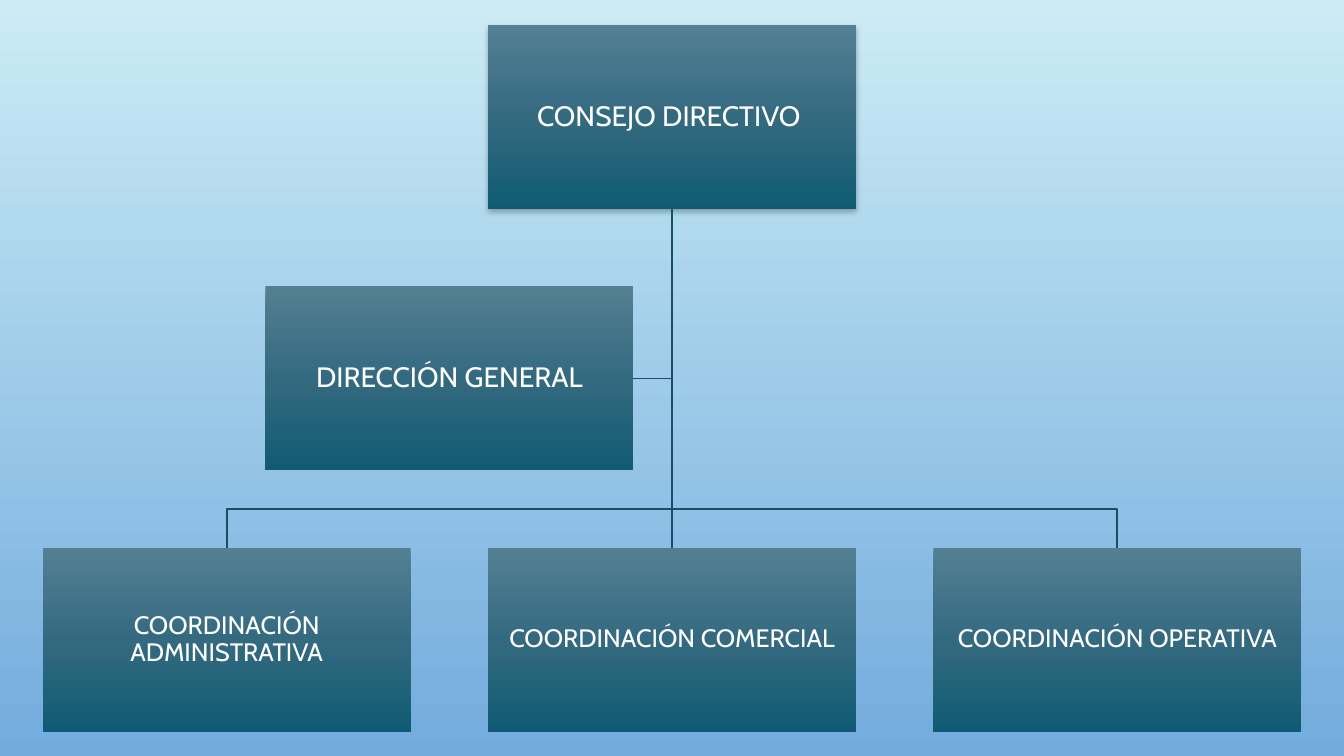
import copy

import pptx
import pptx.dml.color
import pptx.enum.shapes
import pptx.enum.text
import pptx.oxml
import pptx.oxml.ns
import pptx.util
from pptx.dml.color import RGBColor
from pptx.util import Inches

SKY = [RGBColor(0xCB, 0xEC, 0xF5), RGBColor(0x73, 0xAB, 0xDD)]
TEAL = [RGBColor(0x54, 0x7F, 0x93), RGBColor(0x34, 0x6A, 0x80), RGBColor(0x10, 0x5B, 0x73)]
LINE = RGBColor(0x16, 0x50, 0x63)
WHITE = RGBColor(0xFF, 0xFF, 0xFF)
FONT = "Cabin"
SLIDE_W, SLIDE_H = 13.33, 7.5
BOX_W = 3.65
BOX_H = BOX_W / 2
GAP = 0.21 * BOX_W
PITCH = BOX_W + GAP
CENTER = SLIDE_W / 2
TOP_Y = 0.25
STAFF_Y = TOP_Y + BOX_H + GAP
UNIT_Y = STAFF_Y + BOX_H + GAP
BUS_Y = UNIT_Y - GAP / 2
SHADOW = (
    '<a:effectLst %s><a:outerShdw blurRad="50800" dist="25400" dir="5400000" rotWithShape="0">'
    '<a:srgbClr val="000000"><a:alpha val="28000"/></a:srgbClr></a:outerShdw></a:effectLst>'
) % pptx.oxml.ns.nsdecls("a")


def set_gradient(fill, element, colors):
    """Fill from top to bottom with evenly spaced colour stops."""
    fill.gradient()
    fill.gradient_angle = 270
    stops = element.find(".//" + pptx.oxml.ns.qn("a:gsLst"))
    for extra in stops[1:]:
        stops.remove(extra)
    for _ in colors[1:]:
        stops.append(copy.deepcopy(stops[0]))
    for i, (stop, color) in enumerate(zip(fill.gradient_stops, colors)):
        stop.color.rgb = color
        stop.position = i / (len(colors) - 1)


def add_text(s, text, size=18, color=WHITE, font=FONT):
    """Write centred text inside a shape."""
    tf = s.text_frame
    tf.word_wrap = True
    tf.vertical_anchor = pptx.enum.text.MSO_ANCHOR.MIDDLE
    tf.margin_left = tf.margin_right = tf.margin_top = tf.margin_bottom = Inches(0.01)
    p = tf.paragraphs[0]
    p.alignment = pptx.enum.text.PP_ALIGN.CENTER
    p.line_spacing = 0.9
    r = p.add_run()
    r.text = text
    r.font.name = font
    r.font.size = pptx.util.Pt(size)
    r.font.color.rgb = color


def add_box(slide, text, center, top, size=18, shadow=False):
    """Add one box of the organisation chart."""
    s = slide.shapes.add_shape(
        pptx.enum.shapes.MSO_SHAPE.RECTANGLE,
        Inches(center - BOX_W / 2), Inches(top), Inches(BOX_W), Inches(BOX_H))
    set_gradient(s.fill, s._element, TEAL)
    s.line.fill.background()
    if shadow:
        s._element.spPr.append(pptx.oxml.parse_xml(SHADOW))
    else:
        s.shadow.inherit = False
    add_text(s, text, size=size)
    return s


def set_line(line):
    """Give a line the colour and width of the chart."""
    line.color.rgb = LINE
    line.width = pptx.util.Pt(1.25)


def add_bent_line(slide, points):
    """Draw an open line through the given points."""
    start, *rest = [(Inches(x), Inches(y)) for x, y in points]
    builder = slide.shapes.build_freeform(*start)
    builder.add_line_segments(rest, close=False)
    s = builder.convert_to_shape()
    s.fill.background()
    s.shadow.inherit = False
    set_line(s.line)


def add_stem(slide, upper, lower):
    """Join the bottom of one box to the top of another."""
    c = slide.shapes.add_connector(pptx.enum.shapes.MSO_CONNECTOR.STRAIGHT, 0, 0, 0, 0)
    c.begin_connect(upper, 2)
    c.end_connect(lower, 0)
    set_line(c.line)
    c._element.spPr.append(
        pptx.oxml.parse_xml("<a:effectLst %s/>" % pptx.oxml.ns.nsdecls("a")))


def main():
    """Build the organisation chart slide."""
    prs = pptx.Presentation()
    prs.slide_width, prs.slide_height = Inches(SLIDE_W), Inches(SLIDE_H)
    slide = prs.slides.add_slide(prs.slide_layouts[6])
    set_gradient(slide.background.fill, slide._element, SKY)

    names = ["COORDINACIÓN ADMINISTRATIVA", "COORDINACIÓN COMERCIAL", "COORDINACIÓN OPERATIVA"]
    centers = [CENTER + (i - 1) * PITCH for i in range(len(names))]
    staff_x, staff_mid = CENTER - PITCH / 2, STAFF_Y + BOX_H / 2
    root = (CENTER, TOP_Y + BOX_H)

    add_bent_line(slide, [root, (CENTER, staff_mid), (staff_x + BOX_W / 2, staff_mid)])
    for x in centers[::2]:
        add_bent_line(slide, [root, (CENTER, BUS_Y), (x, BUS_Y), (x, UNIT_Y)])

    board = add_box(slide, "CONSEJO DIRECTIVO ", CENTER, TOP_Y, size=20, shadow=True)
    units = [add_box(slide, name, x, UNIT_Y) for name, x in zip(names, centers)]
    add_box(slide, "DIRECCIÓN GENERAL", staff_x, STAFF_Y, size=20)
    add_stem(slide, board, units[1])

    prs.save("out.pptx")


if __name__ == "__main__":
    main()
